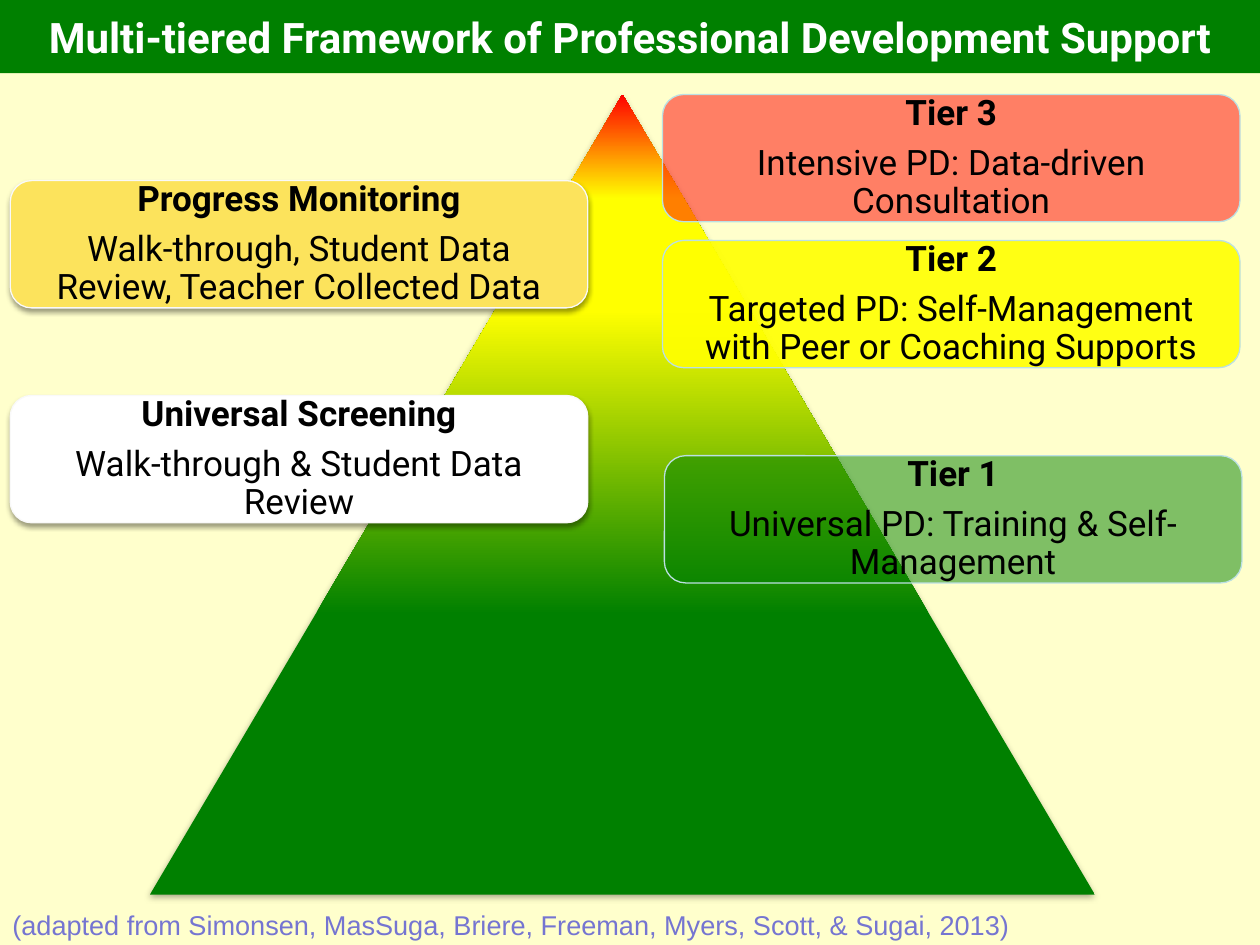
from lxml import etree
from pptx import Presentation
from pptx.dml.color import RGBColor
from pptx.enum.shapes import MSO_SHAPE
from pptx.enum.text import MSO_ANCHOR, PP_ALIGN
from pptx.oxml.ns import qn
from pptx.util import Pt

TRIANGLE = MSO_SHAPE.ISOSCELES_TRIANGLE
ROUNDED = MSO_SHAPE.ROUNDED_RECTANGLE
RECTANGLE = MSO_SHAPE.RECTANGLE
MIDDLE = MSO_ANCHOR.MIDDLE
CENTER = PP_ALIGN.CENTER

COLORS = {
    "cream": "FFFFCC", "green": "008000", "yellow": "FFFF00", "red": "FF0000",
    "gold": "FCE35C", "white": "FFFFFF", "black": "000000",
    "tier_line": "BBE0E3", "data_line": "F9F9F9", "citation": "7575D1",
}
HEADING_FONT, CITATION_FONT = "Roboto", "Arial"
CARD_WIDTH, CARD_HEIGHT = 330, 72.7
DATA_LEFT = 5.9

# heading, description, left, top, fill, opacity in percent
TIERS = [
    ("Tier 3", "Intensive PD: Data-driven Consultation", 378.6, 54, "red", 50),
    ("Tier 2", "Targeted PD: Self-Management with Peer or Coaching Supports",
     378.6, 137.4, "yellow", 90),
    ("Tier 1", "Universal PD: Training & Self-Management", 379.7, 260.4, "green", 50),
]
# heading, description, top, fill
DATA_SOURCES = [
    ("Progress Monitoring", "Walk-through, Student Data Review, Teacher Collected Data",
     103.2, "gold"),
    ("Universal Screening", "Walk-through & Student Data Review", 226, "white"),
]
# position in percent from the base up, color
PYRAMID_STOPS = [(35, "green"), (73, "yellow"), (87, "yellow"), (100, "red")]


def rgb(name):
    return RGBColor.from_string(COLORS[name])


def add_color(parent, name, opacity=100):
    color = etree.SubElement(parent, qn("a:srgbClr"), val=COLORS[name])
    if opacity < 100:
        etree.SubElement(color, qn("a:alpha"), val=str(opacity * 1000))


def add_plain_shape(slide, kind, left, top, width, height):
    shape = slide.shapes.add_shape(kind, Pt(left), Pt(top), Pt(width), Pt(height))
    shape.shadow.inherit = False
    shape.line.fill.background()
    return shape


def drop_shadow(shape, opacity, distance):
    effects = shape._element.spPr.find(qn("a:effectLst"))
    shadow = etree.SubElement(
        effects, qn("a:outerShdw"), blurRad=str(Pt(3.1)), dist=str(Pt(distance)),
        dir="5400000", rotWithShape="0")
    add_color(shadow, "black", opacity)


def style(paragraph, font_name, size, color, bold=False):
    font = paragraph.font
    font.name, font.size, font.bold = font_name, Pt(size), bold
    font.color.rgb = rgb(color)


def add_pyramid(slide):
    pyramid = add_plain_shape(slide, TRIANGLE, 85.7, 54, 540, 457.2)
    pyramid.fill.gradient()
    pyramid.fill.gradient_angle = 90
    stops = pyramid._element.spPr.find(qn("a:gradFill")).find(qn("a:gsLst"))
    for default_stop in list(stops):
        stops.remove(default_stop)
    for position, color in PYRAMID_STOPS:
        add_color(etree.SubElement(stops, qn("a:gs"), pos=str(position * 1000)), color)
    drop_shadow(pyramid, 35, 1.8)


def add_card(slide, heading, description, left, top, fill, line, opacity=100):
    card = add_plain_shape(slide, ROUNDED, left, top, CARD_WIDTH, CARD_HEIGHT)
    card.fill.solid()
    card.fill.fore_color.rgb = rgb(fill)
    if opacity < 100:
        fill_color = card._element.spPr.find(qn("a:solidFill"))[0]
        etree.SubElement(fill_color, qn("a:alpha"), val=str(opacity * 1000))
    card.line.color.rgb = rgb(line)
    card.line.width = Pt(0.75)

    frame = card.text_frame
    frame.word_wrap = True
    frame.vertical_anchor = MIDDLE
    frame.margin_left = frame.margin_right = Pt(6)
    frame.margin_top = frame.margin_bottom = Pt(6)
    frame.text = f"{heading}\n{description}"
    for index, paragraph in enumerate(frame.paragraphs):
        paragraph.alignment = CENTER
        paragraph.line_spacing = 0.9
        paragraph.space_after = Pt(7)
        style(paragraph, HEADING_FONT, 20, "black", bold=index == 0)
    return card


def add_citation(slide, text):
    citation = slide.shapes.add_textbox(Pt(0), Pt(515.5), Pt(678), Pt(26))
    citation.text_frame.word_wrap = True
    citation.text_frame.text = text
    style(citation.text_frame.paragraphs[0], CITATION_FONT, 15.5, "citation")


def add_title(slide, text):
    banner = add_plain_shape(slide, RECTANGLE, -12, 0, 744, 41.8)
    banner.fill.solid()
    banner.fill.fore_color.rgb = rgb("green")
    frame = banner.text_frame
    frame.word_wrap = True
    frame.vertical_anchor = MIDDLE
    frame.text = text
    frame.paragraphs[0].alignment = CENTER
    style(frame.paragraphs[0], HEADING_FONT, 24, "white", bold=True)


def main():
    presentation = Presentation()
    presentation.slide_width, presentation.slide_height = Pt(720), Pt(540)
    slide = presentation.slides.add_slide(presentation.slide_layouts[6])
    slide.background.fill.solid()
    slide.background.fill.fore_color.rgb = rgb("cream")

    add_pyramid(slide)

    # Support tiers on the right
    for heading, description, left, top, fill, opacity in TIERS:
        add_card(slide, heading, description, left, top, fill, "tier_line", opacity)

    # Data sources on the left
    for heading, description, top, fill in DATA_SOURCES:
        card = add_card(slide, heading, description, DATA_LEFT, top, fill, "data_line")
        drop_shadow(card, 38, 1.6)

    # Citation and title
    add_citation(slide, "(adapted from Simonsen, MasSuga, Briere, Freeman, Myers, "
                        "Scott, & Sugai, 2013)")
    add_title(slide, "Multi-tiered Framework of Professional Development Support")
    presentation.save("out.pptx")


if __name__ == "__main__":
    main()
